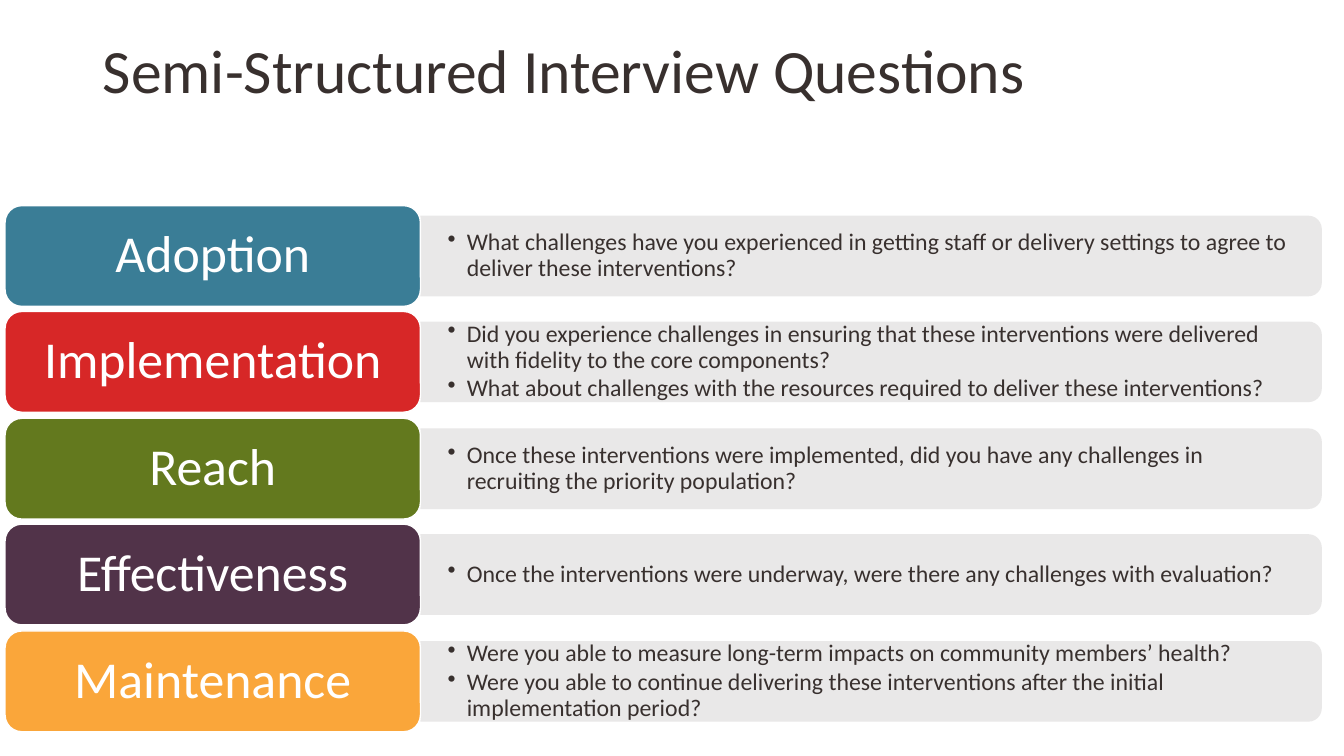
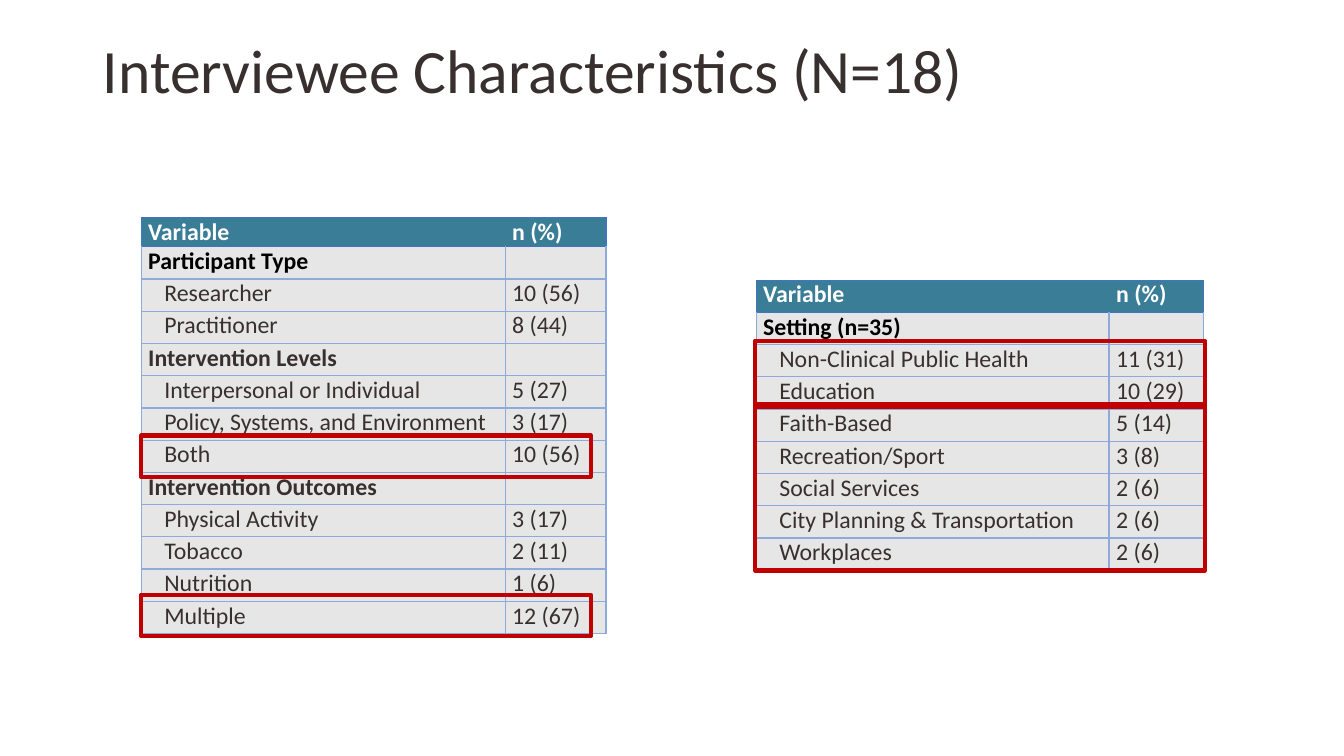
"""Build two slides on semi-structured interviews: the questions and the interviewees."""
import pptx
import pptx.util
import pptx.oxml
import pptx.oxml.ns
import pptx.dml.color
import pptx.enum.shapes
import pptx.enum.text

PX = 9144
FONT = "Calibri"
C = {"text": "38302E", "white": "FFFFFF", "black": "000000", "gray": "E7E6E6",
     "teal": "3A7D96", "red": "D72727", "green": "63791E", "plum": "513349",
     "orange": "FAA63A", "grid": "8EAADB", "head_grid": "4472C4", "mark": "C00000"}

QUESTIONS = [
    ("Adoption", "teal", [
        "What challenges have you experienced in getting staff or delivery settings to agree to deliver these interventions?"]),
    ("Implementation", "red", [
        "Did you experience challenges in ensuring that these interventions were delivered with fidelity to the core components?",
        "What about challenges with the resources required to deliver these interventions?"]),
    ("Reach", "green", [
        "Once these interventions were implemented, did you have any challenges in recruiting the priority population?"]),
    ("Effectiveness", "plum", [
        "Once the interventions were underway, were there any challenges with evaluation?"]),
    ("Maintenance", "orange", [
        "Were you able to measure long-term impacts on community members’ health?",
        "Were you able to continue delivering these interventions after the initial implementation period?"]),
]

HEADER = ("Variable", "n (%)")
TABLES = [
    {"at": (140, 216), "cols": (361, 100), "head_height": 28, "rows": [
        ("Participant Type", ""), ("Researcher", "10 (56)"), ("Practitioner", "8 (44)"),
        ("Intervention Levels", ""), ("Interpersonal or Individual", "5 (27)"),
        ("Policy, Systems, and Environment", "3 (17)"), ("Both", "10 (56)"),
        ("Intervention Outcomes", ""), ("Physical Activity", "3 (17)"),
        ("Tobacco", "2 (11)"), ("Nutrition", "1 (6)"), ("Multiple", "12 (67)")]},
    {"at": (750, 278), "cols": (350, 94), "head_height": 32, "rows": [
        ("Setting (n=35)", ""), ("Non-Clinical Public Health", "11 (31)"),
        ("Education", "10 (29)"), ("Faith-Based", "5 (14)"), ("Recreation/Sport", "3 (8)"),
        ("Social Services", "2 (6)"), ("City Planning & Transportation", "2 (6)"),
        ("Workplaces", "2 (6)")]},
]
ROW_HEIGHT = 32
HIGHLIGHTS = [(140, 432, 446, 41), (140, 590, 446, 41),
              (749, 338, 446, 66), (749, 401, 446, 165)]


def px(*values):
    return [pptx.util.Emu(v * PX) for v in values]


def rgb(name):
    return pptx.dml.color.RGBColor.from_string(C[name])


def style(p, size, color, bold=False):
    for r in p.runs:
        r.font.name = FONT
        r.font.size = pptx.util.Pt(size)
        r.font.bold = bold
        r.font.color.rgb = rgb(color)


def set_frame(tf, x_inset, y_inset):
    tf.word_wrap = True
    tf.auto_size = pptx.enum.text.MSO_AUTO_SIZE.NONE
    tf.vertical_anchor = pptx.enum.text.MSO_ANCHOR.MIDDLE
    tf.margin_left = tf.margin_right = px(x_inset)[0]
    tf.margin_top = tf.margin_bottom = px(y_inset)[0]


def add_shape(s, kind, box, fill=None, line=None, width=1):
    sp = s.shapes.add_shape(getattr(pptx.enum.shapes.MSO_SHAPE, kind), *px(*box))
    sp.shadow.inherit = False
    if fill:
        sp.fill.solid()
        sp.fill.fore_color.rgb = rgb(fill)
    else:
        sp.fill.background()
    if line:
        sp.line.color.rgb = rgb(line)
        sp.line.width = pptx.util.Pt(width)
    else:
        sp.line.fill.background()
    return sp


def sub(parent, tag, **attrs):
    el = parent.makeelement(pptx.oxml.ns.qn(tag), attrs)
    parent.append(el)
    return el


def add_slide(prs, title):
    s = prs.slides.add_slide(prs.slide_layouts[5])
    sp = s.shapes.title
    sp.left, sp.top, sp.width, sp.height = px(92, 0, 1150, 145)
    set_frame(sp.text_frame, 10, 5)
    p = sp.text_frame.paragraphs[0]
    p.text = title
    p.alignment = pptx.enum.text.PP_ALIGN.LEFT
    p.line_spacing = 0.9
    style(p, 44, "text")
    return s


def add_question(s, top, label, color, questions):
    middle = top + 50
    bar = add_shape(s, "ROUND_2_SAME_RECTANGLE", (824, middle - 447, 80, 894), "gray")
    bar.rotation = 90
    sub(bar.fill._xPr.find(".//" + pptx.oxml.ns.qn("a:srgbClr")), "a:alpha", val="90000")

    tf = s.shapes.add_textbox(*px(417, middle - 36, 890, 72)).text_frame
    set_frame(tf, 27, 14)
    for i, question in enumerate(questions):
        p = tf.add_paragraph() if i else tf.paragraphs[0]
        p.text = question
        p.line_spacing = 0.9
        p.space_after = pptx.util.Pt(2)
        pPr = p._p.get_or_add_pPr()
        pPr.set("marL", str(19 * PX))
        pPr.set("indent", str(-19 * PX))
        sub(pPr, "a:buChar", char="•")
        style(p, 17, "text")

    sp = add_shape(s, "ROUNDED_RECTANGLE", (5, top, 412, 100), color, "white")
    set_frame(sp.text_frame, 15, 8)
    p = sp.text_frame.paragraphs[0]
    p.text = label
    p.alignment = pptx.enum.text.PP_ALIGN.CENTER
    p.line_spacing = 0.9
    style(p, 37, "white")


def set_borders(cell, edges):
    tcPr = cell._tc.get_or_add_tcPr()
    for side in "LRTB":
        ln = sub(tcPr, "a:ln" + side, w=str(pptx.util.Pt(1)))
        if edges[side]:
            sub(sub(ln, "a:solidFill"), "a:srgbClr", val=C[edges[side]])
        else:
            sub(ln, "a:noFill")


def fill_cell(cell, text, row, col, heading):
    head = row == 0
    edges = dict.fromkeys("LRTB", "head_grid" if head else "grid")
    if head:
        edges["L" if col else "R"] = None
    elif row == 1:
        edges["T"] = "head_grid"
    set_borders(cell, edges)
    cell.fill.solid()
    cell.fill.fore_color.rgb = rgb("teal" if head else "gray")
    cell.margin_left = cell.margin_right = px(7)[0]
    cell.margin_top = cell.margin_bottom = 0
    p = cell.text_frame.paragraphs[0]
    if text:
        p.text = text
    if col == 0 and not heading:
        p._p.get_or_add_pPr().set("marL", str(16 * PX))
    style(p, 17, ("white", "black")[row] if row < 2 else "text", heading)


def add_variable_table(s, data):
    rows = [HEADER] + data["rows"]
    heights = [data["head_height"]] + [ROW_HEIGHT] * len(data["rows"])
    size = (sum(data["cols"]), sum(heights))
    table = s.shapes.add_table(len(rows), len(HEADER), *px(*data["at"], *size)).table
    table.horz_banding = False
    for column, width in zip(table.columns, px(*data["cols"])):
        column.width = width
    for i, (values, height) in enumerate(zip(rows, px(*heights))):
        table.rows[i].height = height
        heading = i == 0 or not values[1]
        for j, text in enumerate(values):
            fill_cell(table.cell(i, j), text, i, j, heading)


def main():
    prs = pptx.Presentation()
    prs.slide_width, prs.slide_height = px(1333, 750)

    s = add_slide(prs, "Semi-Structured Interview Questions")
    for i, question in enumerate(QUESTIONS):
        add_question(s, 204 + i * 211 // 2, *question)

    s = add_slide(prs, "Interviewee Characteristics (N=18)")
    for data in TABLES:
        add_variable_table(s, data)
    for box in HIGHLIGHTS:
        add_shape(s, "RECTANGLE", box, line="mark", width=3)

    prs.save("out.pptx")


if __name__ == "__main__":
    main()
